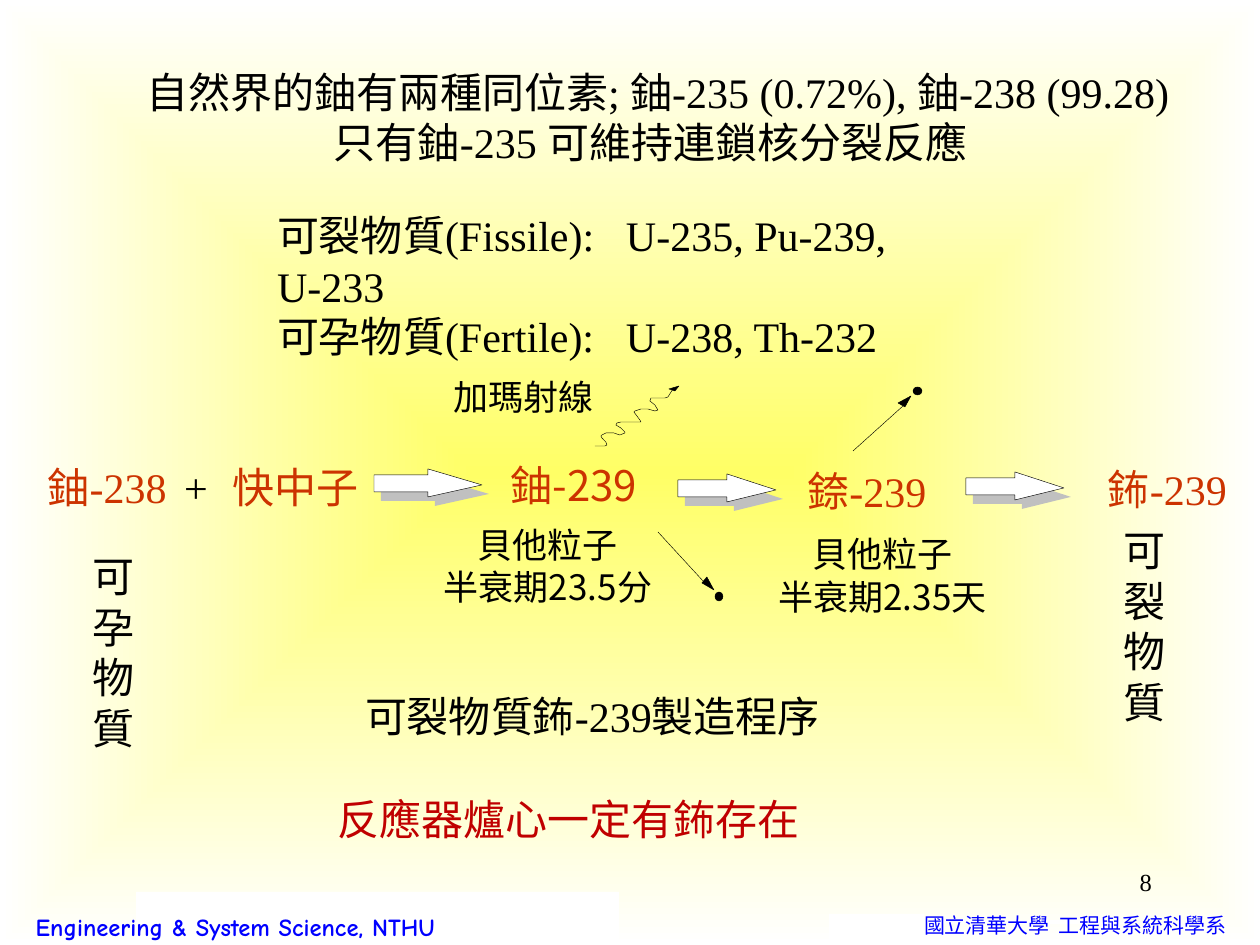
import dataclasses

import pptx
import pptx.dml.color
import pptx.enum.dml
import pptx.enum.shapes
import pptx.enum.text
import pptx.oxml.ns
import pptx.util
from lxml import etree

PX = 914400 / 126  # EMU in one px
ALIGN = pptx.enum.text.PP_ALIGN
ANCHOR = pptx.enum.text.MSO_ANCHOR
qn = pptx.oxml.ns.qn


@dataclasses.dataclass(frozen=True)
class Theme:
    serif: str = "Times New Roman"
    sans: str = "Noto Sans CJK SC"
    comic: str = "Comic Neue"
    glow: str = "FFFF66"
    white: str = "FFFFFF"
    shade: str = "C0C0C0"
    ink: str = "000000"
    nuclide: str = "CC3300"
    warning: str = "C00000"
    footer: str = "0000FF"
    body: int = 24
    label: int = 20
    number: int = 14
    school: int = 12
    hairline: float = 0.25


T = Theme()


def emu(*lengths):
    return [round(v * PX) for v in lengths]


def rgb(color):
    return pptx.dml.color.RGBColor.from_string(color)


def set_background(s):
    """Glow that spreads from the middle to the edges."""
    fill = s.background.fill
    fill.gradient()
    for stop, color, pos in zip(fill.gradient_stops, (T.glow, T.white), (0, 1)):
        stop.color.rgb = rgb(color)
        stop.position = pos
    grad = next(s._element.iter(qn("a:gradFill")))
    grad.remove(grad.find(qn("a:lin")))
    shape = etree.SubElement(grad, qn("a:path"), {"path": "shape"})
    etree.SubElement(shape, qn("a:fillToRect"), dict.fromkeys("ltrb", "50000"))


def paint(sp, fill=None, line=None):
    sp.shadow.inherit = False
    if fill:
        sp.fill.solid()
        sp.fill.fore_color.rgb = rgb(fill)
    else:
        sp.fill.background()
    if line:
        sp.line.color.rgb = rgb(line)
        sp.line.width = pptx.util.Pt(T.hairline)
    else:
        sp.line.fill.background()


def add_preset(s, kind, box, fill, line=None):
    sp = s.shapes.add_shape(kind, *emu(*box))
    paint(sp, fill, line)


def add_outline(s, points, fill=None, line=None, close=True):
    builder = s.shapes.build_freeform(*points[0], scale=PX)
    builder.add_line_segments(points[1:], close=close)
    paint(builder.convert_to_shape(), fill, line)


def add_line(s, start, end, color, width):
    cn = s.shapes.add_connector(pptx.enum.shapes.MSO_CONNECTOR.STRAIGHT, *emu(*start, *end))
    cn.line.color.rgb = rgb(color)
    cn.line.width = pptx.util.Pt(width)
    etree.SubElement(cn._element.spPr, qn("a:effectLst"))


def add_block_arrow(s, x, y, w):
    """White block arrow over its grey shade."""
    neck = w // 2
    outline = [(0, 6), (neck, 6), (neck, 0), (w, 16), (neck, 28), (neck, 23), (0, 23)]
    for dx, dy, fill, line in ((7, 9, T.shade, None), (0, 0, T.white, T.ink)):
        add_outline(s, [(x + dx + a, y + dy + b) for a, b in outline], fill, line)


def add_beta(s, start, end, head, dot):
    """Emitted particle: shaft, arrowhead and dot."""
    add_line(s, start, end, T.ink, T.hairline)
    add_outline(s, head, T.ink, T.ink)
    add_preset(s, pptx.enum.shapes.MSO_SHAPE.OVAL, dot, T.ink, T.ink)


def add_run(p, text, color, spacing, size, font, bold):
    r = p.add_run()
    r.text = text
    formats = {"name": font, "size": pptx.util.Pt(size), "bold": bold}
    for key, value in formats.items():
        setattr(r.font, key, value)
    r.font.color.rgb = rgb(color)
    rPr = r._r.get_or_add_rPr()
    if spacing:
        rPr.set("spc", str(spacing * 100))
    etree.SubElement(rPr, qn("a:ea"), {"typeface": T.sans if font == T.serif else font})


def fill_text(sp, lines, inset=(13, 6), align=ALIGN.LEFT, anchor=ANCHOR.TOP, tabs=(),
              indents=(), color=T.ink, size=T.body, font=T.serif, bold=False):
    """A line is a string or (text, color, letter spacing) runs; indents are (margin, first line)."""
    tf = sp.text_frame
    side, edge = emu(*inset)
    frame = {"word_wrap": True, "auto_size": pptx.enum.text.MSO_AUTO_SIZE.NONE,
             "vertical_anchor": anchor, "margin_left": side, "margin_right": side,
             "margin_top": edge, "margin_bottom": edge}
    for key, value in frame.items():
        setattr(tf, key, value)
    for i, line in enumerate(lines):
        p = tf.add_paragraph() if i else tf.paragraphs[0]
        p.alignment = align
        pPr = p._p.get_or_add_pPr()
        if indents:
            for key, value in zip(("marL", "indent"), emu(*indents[i])):
                pPr.set(key, str(value))
        if tabs:
            stops = etree.SubElement(pPr, qn("a:tabLst"))
            for pos in emu(*tabs):
                etree.SubElement(stops, qn("a:tab"), {"pos": str(pos), "algn": "l"})
        for text, tint, spacing in [(line, color, 0)] if isinstance(line, str) else line:
            add_run(p, text, tint, spacing, size, font, bold)


def add_text(s, box, *lines, **style):
    fill_text(s.shapes.add_textbox(*emu(*box)), lines, **style)


def add_label(s, box, *lines, **style):
    """Centred text with almost no inset, as used in the reaction chain."""
    add_text(s, box, *lines, **{"inset": (1, 1), "align": ALIGN.CENTER, **style})


def add_footer(s):
    rect = pptx.enum.shapes.MSO_SHAPE.RECTANGLE
    for box in ((136, 914, 462, 32), (829, 914, 95, 31), (136, 892, 483, 53)):
        add_preset(s, rect, box, T.white)
    add_line(s, (912, 922), (1125, 922), T.white, 2.25)
    add_text(s, (911, 907, 349, 38), "國立清華大學\t工程與系統科學系", tabs=(135,),
             color=T.footer, size=T.school, font=T.sans)
    add_text(s, (0, 908, 471, 37), "Engineering & System Science, NTHU", align=ALIGN.CENTER,
             anchor=ANCHOR.MIDDLE, color=T.footer, size=T.number, font=T.comic, bold=True)
    add_text(s, (903, 861, 262, 63), "8", align=ALIGN.RIGHT, size=T.number)


def add_headings(s):
    title = s.shapes.title
    for key, value in zip(("left", "top", "width", "height"), emu(123, 60, 1067, 113)):
        setattr(title, key, value)
    fill_text(title, ["自然界的鈾有兩種同位素; 鈾-235 (0.72%), 鈾-238 (99.28)",
                      "只有鈾-235 可維持連鎖核分裂反應"], indents=((0, 10), (198, 0)))
    add_text(s, (264, 204, 748, 115), "可裂物質(Fissile):\tU-235, Pu-239, U-233",
             "可孕物質(Fertile):\tU-238, Th-232", tabs=(349,))
    add_text(s, (352, 685, 588, 63), "可裂物質鈽-239製造程序")
    add_text(s, (325, 788, 503, 63), "反應器爐心一定有鈽存在", color=T.warning)


def add_gamma(s):
    wave = [(595, 446), (605, 446), (607, 445), (606, 442), (602, 438), (601, 436), (602, 435),
            (606, 433), (614, 433), (620, 435), (625, 433), (625, 432), (621, 428), (616, 425),
            (617, 423), (621, 422), (634, 422), (641, 422), (640, 420), (634, 412), (635, 411),
            (638, 410), (641, 409), (648, 409), (655, 411), (658, 410), (655, 405), (650, 401),
            (651, 398), (655, 398), (665, 398), (668, 397), (673, 389)]
    add_outline(s, wave, line=T.ink, close=False)
    add_outline(s, [(669, 389), (675, 391), (679, 386)], T.ink, T.ink)
    add_label(s, (403, 375, 192, 53), "加瑪射線", align=ALIGN.RIGHT, size=T.label)


def add_reaction(s):
    # Nuclides
    add_label(s, (35, 461, 336, 49),
              [("鈾-238", T.nuclide, 0), (" + ", T.ink, 4), ("快中子", T.nuclide, 0)])
    add_label(s, (484, 459, 180, 40), "鈾-239", color=T.nuclide, font=T.sans)
    add_label(s, (771, 465, 192, 40), "錼-239", color=T.nuclide)
    add_label(s, (1078, 463, 179, 47), "鈽-239", color=T.nuclide)
    for x, y, w in ((374, 469, 108), (678, 474, 98), (966, 472, 98)):
        add_block_arrow(s, x, y, w)
    # Emissions and half-lives
    add_gamma(s)
    add_beta(s, (658, 532), (704, 582), [(707, 577), (702, 583), (714, 590)], (715, 592, 8, 9))
    add_beta(s, (853, 451), (903, 406), [(898, 403), (905, 407), (911, 396)], (913, 387, 9, 8))
    for box, half_life in (((427, 522, 242, 122), "23.5分"), ((741, 532, 283, 105), "2.35天")):
        add_label(s, box, "貝他粒子", "半衰期" + half_life, size=T.label, font=T.sans)
    # Narrow boxes stack one character per line
    add_label(s, (82, 550, 63, 220), "可孕物質")
    add_label(s, (1108, 524, 73, 251), "可裂物質")


def main():
    prs = pptx.Presentation()
    prs.slide_width, prs.slide_height = emu(1260, 945)
    s = prs.slides.add_slide(prs.slide_layouts[5])
    set_background(s)
    add_footer(s)
    add_reaction(s)
    add_headings(s)
    prs.save("out.pptx")


if __name__ == "__main__":
    main()
